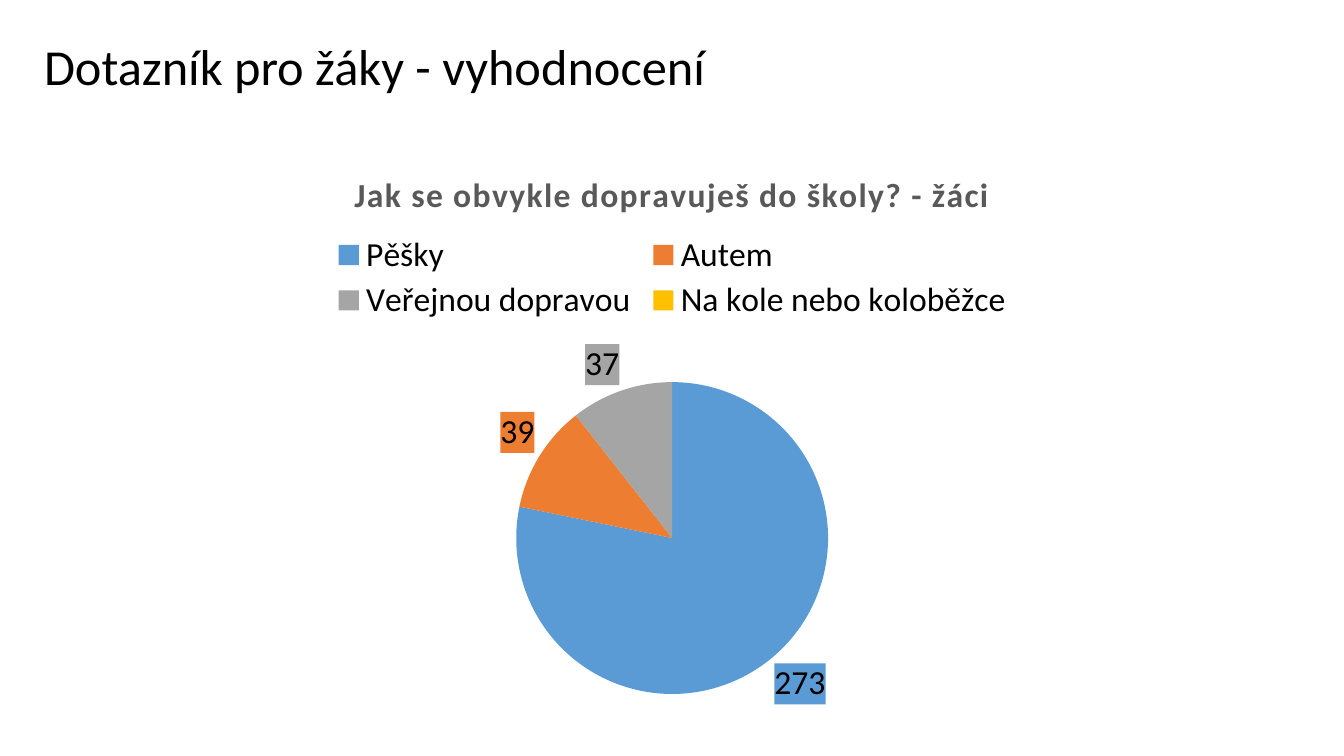
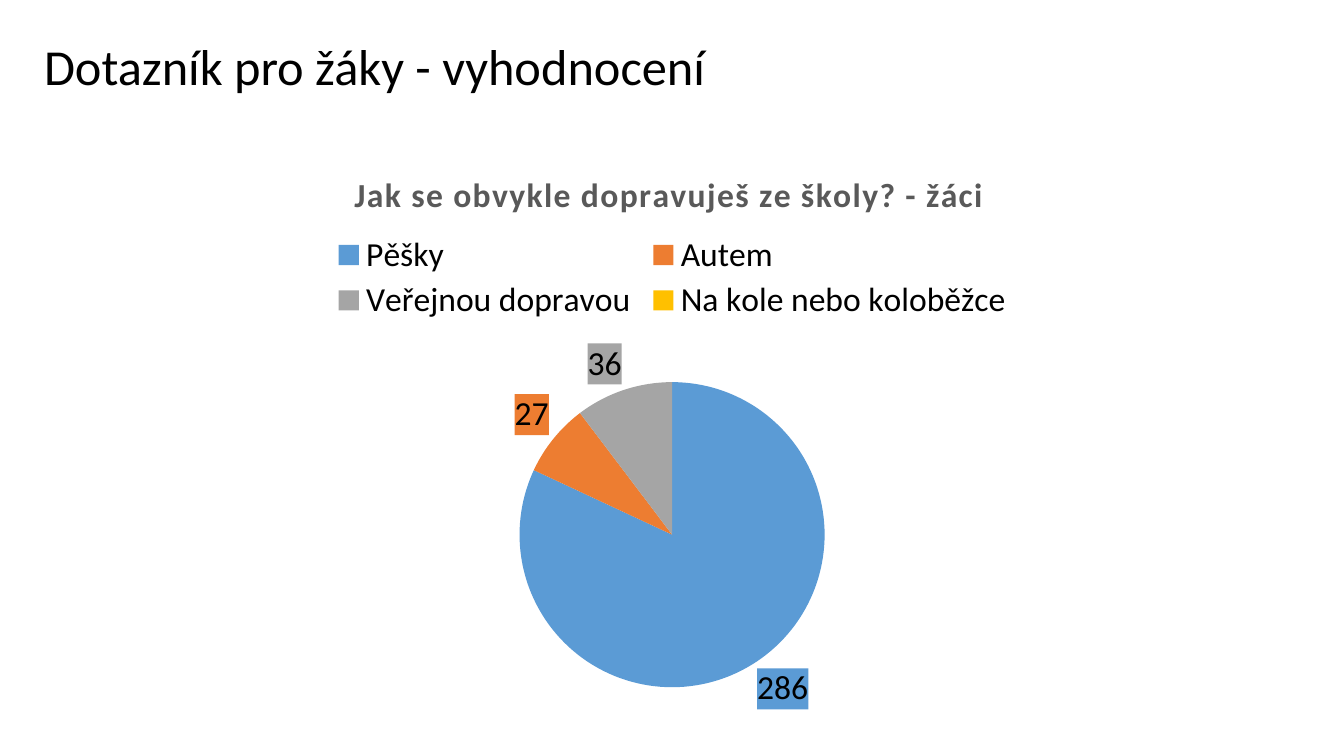
from pptx import Presentation
from pptx.chart.data import CategoryChartData
from pptx.dml.color import RGBColor
from pptx.enum.chart import XL_CHART_TYPE as ChartType
from pptx.enum.chart import XL_LABEL_POSITION as LabelPosition
from pptx.enum.chart import XL_LEGEND_POSITION as LegendPosition
from pptx.enum.text import MSO_ANCHOR as Anchor
from pptx.oxml import parse_xml
from pptx.oxml.ns import nsdecls
from pptx.util import Cm, Pt

FONT = "Calibri"
BLACK = RGBColor(0x00, 0x00, 0x00)
GREY_TEXT = RGBColor(0x59, 0x59, 0x59)

HEADING = "Dotazník pro žáky - vyhodnocení"
TRANSPORT = [
    ("Pěšky", RGBColor(0x5B, 0x9B, 0xD5)),
    ("Autem", RGBColor(0xED, 0x7D, 0x31)),
    ("Veřejnou dopravou", RGBColor(0xA5, 0xA5, 0xA5)),
    ("Na kole nebo koloběžce", RGBColor(0xFF, 0xC0, 0x00)),
]
# question, answers in the order of TRANSPORT, pie diameter in cm
QUESTIONS = [
    ("Jak se obvykle dopravuješ do školy? - žáci", (273, 39, 37, 0), 7.86),
    ("Jak se obvykle dopravuješ ze školy? - žáci", (286, 27, 36, 0), 7.69),
]

CHART_WIDTH, CHART_HEIGHT = 32.0, 15.01
PIE_TOP = 6.13


def style_font(font, size, color=BLACK, bold=False):
    font.name = FONT
    font.size = Pt(size)
    font.bold = bold
    font.color.rgb = color


def layout_xml(left, top, width=None, height=None, inner=False):
    """Manual chart layout from lengths in cm."""
    parts = ['<c:layoutTarget val="inner"/>'] if inner else []
    parts += ['<c:xMode val="edge"/>', '<c:yMode val="edge"/>']
    shares = [("x", left, CHART_WIDTH), ("y", top, CHART_HEIGHT),
              ("w", width, CHART_WIDTH), ("h", height, CHART_HEIGHT)]
    parts += [f'<c:{tag} val="{length / whole:.4f}"/>'
              for tag, length, whole in shares if length is not None]
    return parse_xml(f'<c:layout {nsdecls("c")}><c:manualLayout>'
                     f'{"".join(parts)}</c:manualLayout></c:layout>')


def place(element, layout, previous):
    """Put a layout right after the child it has to follow, if any."""
    for old in element.findall(layout.tag):
        element.remove(old)
    before = element.xpath(previous) if previous else []
    if before:
        before[0].addnext(layout)
    else:
        element.insert(0, layout)


def add_heading(slide):
    box = slide.shapes.add_textbox(Cm(0.86), Cm(0), Cm(33), Cm(3.5))
    frame = box.text_frame
    frame.word_wrap = True
    frame.vertical_anchor = Anchor.MIDDLE
    frame.text = HEADING
    paragraph = frame.paragraphs[0]
    paragraph.line_spacing = 0.9
    style_font(paragraph.runs[0].font, 36)


def add_question_title(chart, question):
    title = chart.chart_title
    title.text_frame.text = question
    run = title.text_frame.paragraphs[0].runs[0]
    style_font(run.font, 24, GREY_TEXT, bold=True)
    run.font._element.set("spc", "100")
    title.include_in_layout = False
    place(title._element, layout_xml(7.84, 0.68), "c:tx")


def add_legend(chart):
    chart.has_legend = True
    legend = chart.legend
    legend.position = LegendPosition.TOP
    legend.include_in_layout = False
    style_font(legend.font, 24)
    place(legend._element, layout_xml(7.3, 2.3, 17.4, 2.4), "c:legendPos")


def color_slices(series, answers):
    """Colour each slice and give every answered one a label in its colour."""
    series.data_labels.show_value = False
    for index, ((_, color), count) in enumerate(zip(TRANSPORT, answers)):
        point = series.points[index]
        point.format.fill.solid()
        point.format.fill.fore_color.rgb = color
        if not count:
            continue
        label = point.data_label
        style_font(label.font, 24)
        label.position = LabelPosition.OUTSIDE_END
        text_style = series._element.xpath(
            f"c:dLbls/c:dLbl[c:idx/@val='{index}']/c:txPr")[0]
        text_style.addprevious(parse_xml(
            f'<c:spPr {nsdecls("c", "a")}><a:solidFill>'
            f'<a:srgbClr val="{color}"/></a:solidFill></c:spPr>'))


def add_pie(slide, question, answers, diameter):
    data = CategoryChartData()
    data.categories = [name for name, _ in TRANSPORT]
    data.add_series("Series 1", answers)
    chart = slide.shapes.add_chart(
        ChartType.PIE, Cm(0.94), Cm(3.5), Cm(CHART_WIDTH), Cm(CHART_HEIGHT),
        data).chart
    style_font(chart.font, 10)
    add_question_title(chart, question)
    add_legend(chart)
    plot = chart.plots[0]
    plot.vary_by_categories = True
    color_slices(plot.series[0], answers)
    pie_left = (CHART_WIDTH - diameter) / 2
    place(chart._chartSpace.chart.plotArea,
          layout_xml(pie_left, PIE_TOP, diameter, diameter, inner=True), None)


def main():
    deck = Presentation()
    deck.slide_width, deck.slide_height = Cm(33.87), Cm(19.05)
    for question, answers, diameter in QUESTIONS:
        slide = deck.slides.add_slide(deck.slide_layouts[6])
        add_heading(slide)
        add_pie(slide, question, answers, diameter)
    deck.save("out.pptx")


if __name__ == "__main__":
    main()
